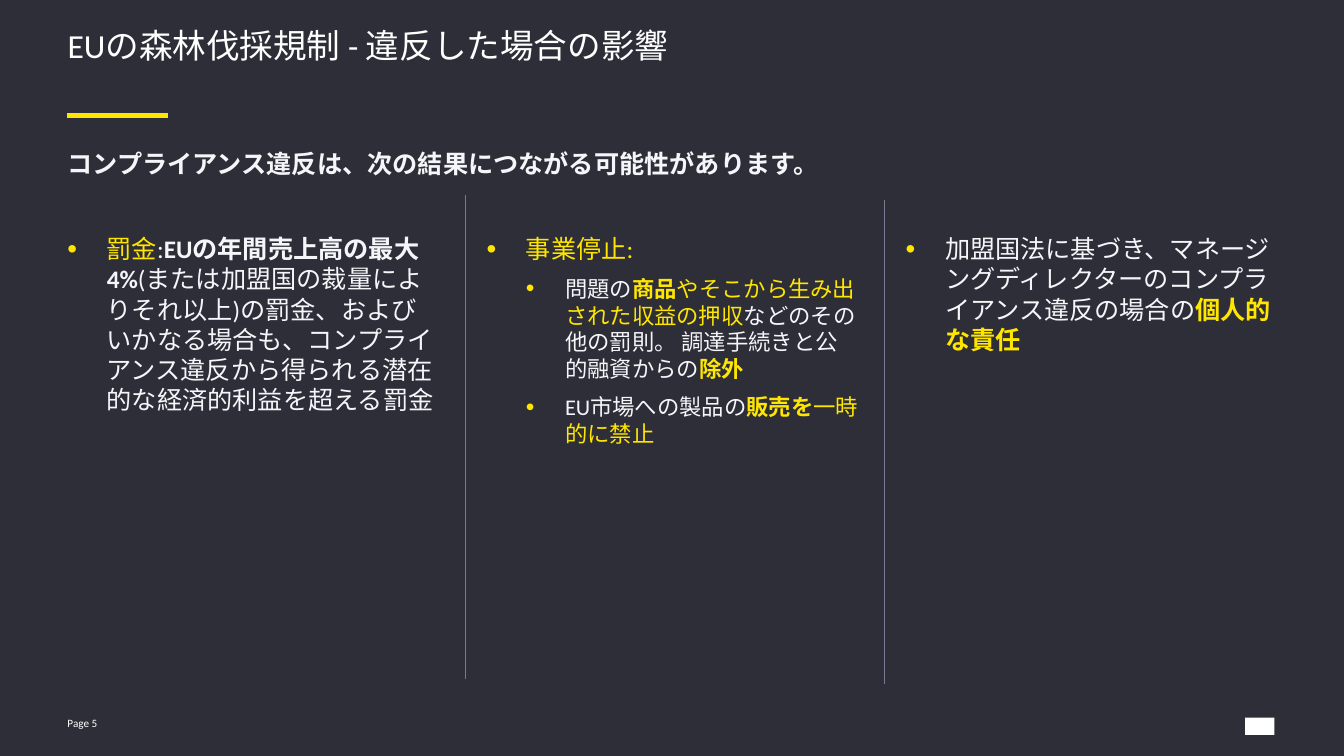
from typing import NamedTuple

from lxml import etree
from pptx import Presentation
from pptx import util as u
from pptx.dml.color import RGBColor
from pptx.enum import shapes, text
from pptx.oxml import ns

DARK = RGBColor(0x2E, 0x2E, 0x38)
YELLOW = RGBColor(0xFF, 0xE6, 0x00)
WHITE = RGBColor(0xFF, 0xFF, 0xFF)
PALE = RGBColor(0xF6, 0xF6, 0xFA)
GREY = RGBColor(0x79, 0x79, 0x91)
FONT = "Calibri"

# Grid: three columns from the left margin, fifteen rows
LEFT, STEP, ROW = 0.67, 4.16, 0.5
INDENT = 0.39


class Run(NamedTuple):
    text: str
    color: RGBColor = PALE
    bold: bool = False


class Para(NamedTuple):
    runs: list[Run]
    size: int = 18
    level: int | None = None  # None means no bullet


class Rule(NamedTuple):
    start: tuple[float, float]
    end: tuple[float, float]
    color: RGBColor = GREY
    width: float = 0.75


def col(n: float) -> u.Length:
    return u.Inches(LEFT + n * STEP)


def row(n: float) -> u.Length:
    return u.Inches(n * ROW)


def span(n: float) -> u.Length:
    return u.Inches(n * STEP)


def bullet(para, level: int) -> None:
    props = para._p.get_or_add_pPr()
    props.set("marL", str(u.Inches(INDENT * (level + 1))))
    props.set("indent", str(-u.Inches(INDENT)))
    tint = etree.SubElement(props, ns.qn("a:buClr"))
    etree.SubElement(tint, ns.qn("a:srgbClr"), val=str(YELLOW))
    etree.SubElement(props, ns.qn("a:buSzPct"), val="110000")
    etree.SubElement(props, ns.qn("a:buFont"), typeface="Arial")
    etree.SubElement(props, ns.qn("a:buChar"), char="•")


def write(shape, paras: list[Para], *, after: float = 0, line: float = 1.0,
          anchor=text.MSO_ANCHOR.TOP) -> None:
    frame = shape.text_frame
    frame.word_wrap = True
    frame.auto_size = text.MSO_AUTO_SIZE.NONE
    frame.vertical_anchor = anchor
    frame.margin_left = frame.margin_right = 0
    frame.margin_top = frame.margin_bottom = 0
    for i, item in enumerate(paras):
        para = frame.add_paragraph() if i else frame.paragraphs[0]
        para.alignment = text.PP_ALIGN.LEFT
        para.line_spacing = line
        para.space_before = u.Pt(0)
        para.space_after = u.Pt(after)
        if item.level is not None:
            para.level = item.level
            bullet(para, item.level)
        for part in item.runs:
            run = para.add_run()
            run.text = part.text
            run.font.name = FONT
            run.font.size = u.Pt(item.size)
            run.font.bold = part.bold
            run.font.color.rgb = part.color


def box(slide, x: float, y: float, wide: float, high: float):
    return slide.shapes.add_textbox(col(x), row(y), span(wide), row(high))


def draw(slide, rule: Rule) -> None:
    (x1, y1), (x2, y2) = rule.start, rule.end
    link = slide.shapes.add_connector(
        shapes.MSO_CONNECTOR.STRAIGHT, col(x1), row(y1), col(x2), row(y2))
    link.line.color.rgb = rule.color
    link.line.width = u.Pt(rule.width)
    etree.SubElement(link._element.spPr, ns.qn("a:effectLst"))


TITLE = Para([Run("EUの森林伐採規制 - 違反した場合の影響", WHITE)], 24)
LEAD = Para([Run("コンプライアンス違反は、次の結果につながる可能性があります。", bold=True)])
PAGE = Para([Run("Page 5", WHITE)], 8)

COLUMNS = [
    [Para([
        Run("罰金", YELLOW),
        Run(":"),
        Run("EUの年間売上高の最大4%", bold=True),
        Run("(または加盟国の裁量によりそれ以上)の罰金、およびいかなる場合も、"
            "コンプライアンス違反から得られる潜在的な経済的利益を超える罰金"),
    ], level=0)],
    [
        Para([Run("事業停止:", YELLOW)], level=0),
        Para([
            Run("問題の"),
            Run("商品", YELLOW, True),
            Run("やそこから生み出された収益の押収", YELLOW),
            Run("などのその他の罰則。 調達手続きと公的融資からの"),
            Run("除外", YELLOW, True),
        ], 16, 1),
        Para([
            Run("EU市場への製品の"),
            Run("販売を", YELLOW, True),
            Run("一時的に禁止", YELLOW),
        ], 16, 1),
    ],
    [Para([
        Run("加盟国法に基づき、マネージングディレクターのコンプライアンス違反の場合の"),
        Run("個人的な責任", YELLOW, True),
    ], level=0)],
]

RULES = [
    Rule((0, 2.29), (0.24, 2.29), YELLOW, 3.25),
    Rule((0.95, 3.87), (0.95, 13.47)),
    Rule((1.95, 3.97), (1.95, 13.57)),
]


def main() -> None:
    deck = Presentation()
    deck.slide_width, deck.slide_height = u.Inches(13.34), u.Inches(7.5)
    slide = deck.slides.add_slide(deck.slide_layouts[5])
    slide.background.fill.solid()
    slide.background.fill.fore_color.rgb = DARK

    # Title and lead sentence
    title = slide.shapes.title
    title.left, title.top = col(0), row(0.62)
    title.width, title.height = span(2.89), row(1.3)
    write(title, [TITLE], line=0.85)
    write(box(slide, 0, 2.94, 2.9, 1), [LEAD], after=8)

    # Three columns of consequences
    for i, paras in enumerate(COLUMNS):
        write(box(slide, i, 4.63, 0.89, 9.5), paras, after=8)

    # Accent bar and dividers
    for rule in RULES:
        draw(slide, rule)

    # Page number and plain corner mark
    write(box(slide, 0, 14.15, 0.18, 0.4), [PAGE], anchor=text.MSO_ANCHOR.MIDDLE)
    mark = slide.shapes.add_shape(
        shapes.MSO_SHAPE.RECTANGLE, col(2.81), row(14.24), span(0.07), row(0.34))
    mark.shadow.inherit = False
    mark.fill.solid()
    mark.fill.fore_color.rgb = WHITE
    mark.line.fill.background()
    deck.save("out.pptx")


if __name__ == "__main__":
    main()
